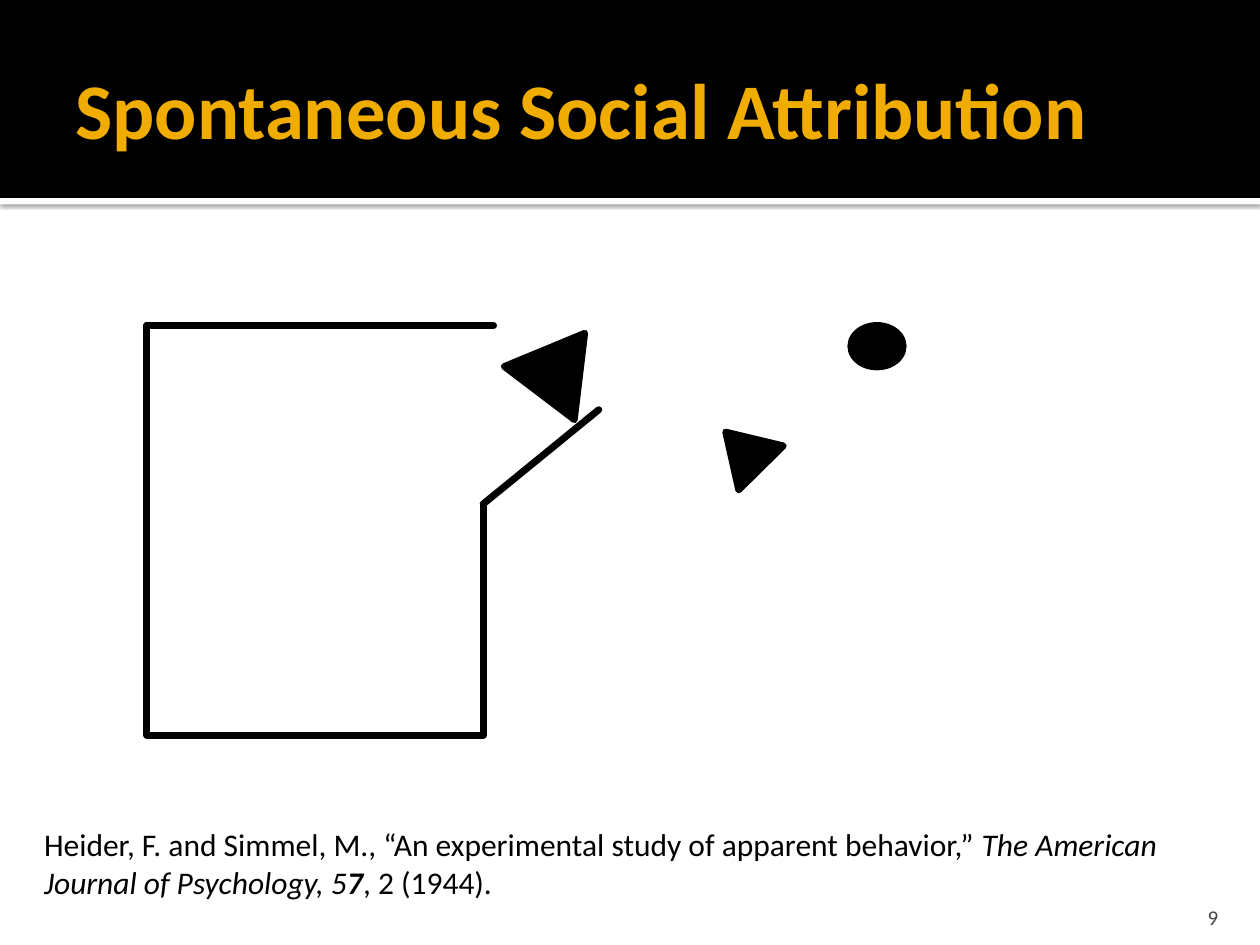
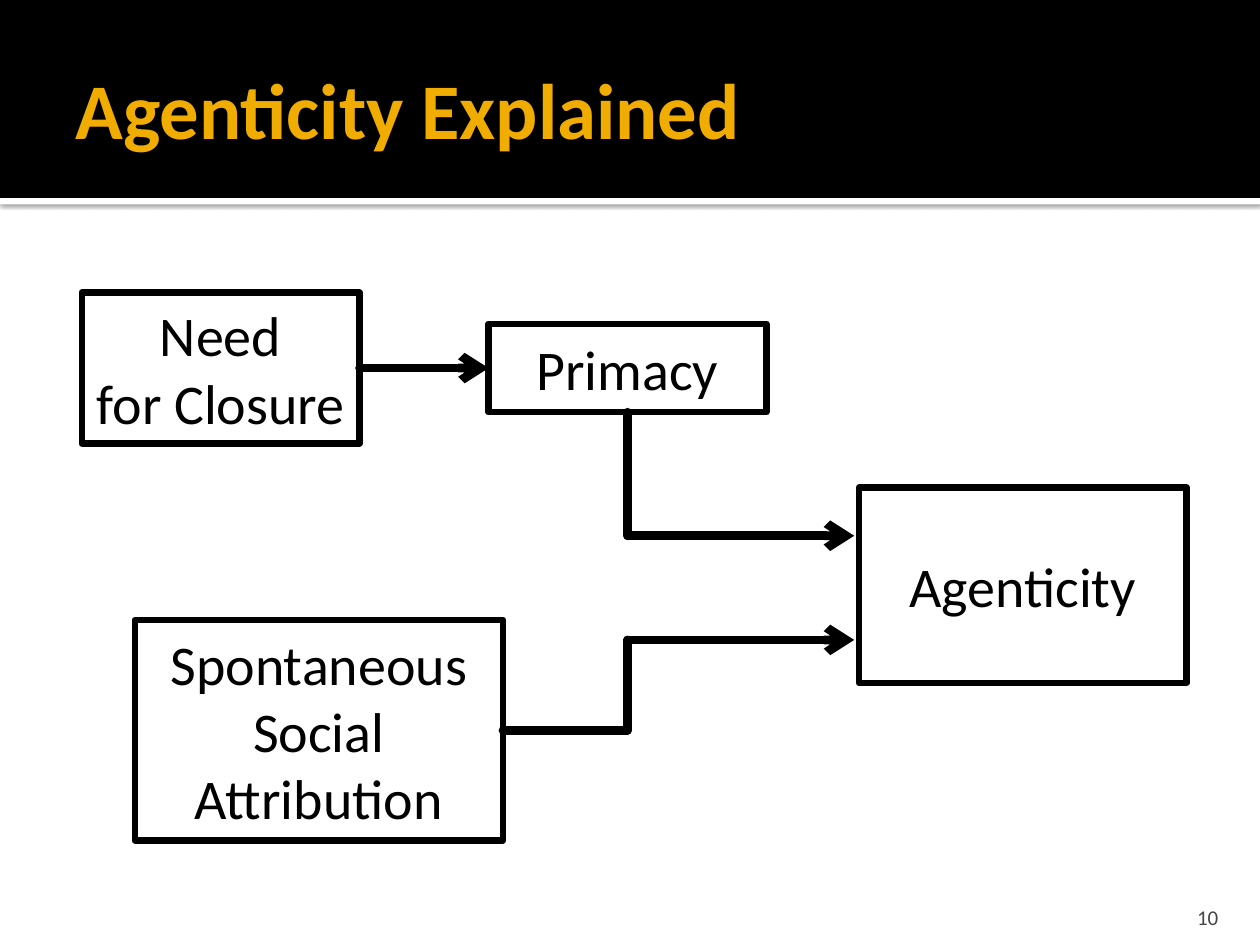
from lxml import etree
from pptx import Presentation
from pptx import util as u
from pptx.dml.color import RGBColor
from pptx.enum import shapes, text
from pptx.oxml import ns

BLACK, WHITE, GOLD, GREY = "000000", "FFFFFF", "F0AD00", "454545"
color = RGBColor.from_string
LEFT, CENTER, RIGHT = text.PP_ALIGN.LEFT, text.PP_ALIGN.CENTER, text.PP_ALIGN.RIGHT
TOP, MIDDLE, BOTTOM = text.MSO_ANCHOR.TOP, text.MSO_ANCHOR.MIDDLE, text.MSO_ANCHOR.BOTTOM


def write(shape, content, size, font_color=BLACK, bold=False, italic=False,
          align=LEFT, anchor=TOP):
    """Append content to the last paragraph; each newline starts another one."""
    frame = shape.text_frame
    frame.word_wrap = True
    frame.vertical_anchor = anchor
    for index, line in enumerate(content.split("\n")):
        paragraph = frame.add_paragraph() if index else frame.paragraphs[-1]
        paragraph.alignment = align
        run = paragraph.add_run()
        run.text = line
        run.font.name = "Calibri"
        run.font.size = u.Pt(size)
        run.font.bold = bold
        run.font.italic = italic
        run.font.color.rgb = color(font_color)


def style(shape, line_width=0, fill=None, arrow=False):
    """Set a round black line and a fill; return the effect list, left empty."""
    if fill:
        shape.fill.solid()
        shape.fill.fore_color.rgb = color(fill)
    if line_width:
        shape.line.width = u.Pt(line_width)
        shape.line.color.rgb = color(BLACK)
        outline = shape.line._get_or_add_ln()
        outline.set("cap", "rnd")
        etree.SubElement(outline, ns.qn("a:round"))
        if arrow:
            etree.SubElement(outline, ns.qn("a:tailEnd"), type="arrow")
    else:
        shape.line.fill.background()
    return etree.SubElement(shape._element.spPr, ns.qn("a:effectLst"))


presentation = Presentation()
presentation.slide_width, presentation.slide_height = u.Cm(25.4), u.Cm(19.05)

# Shared band, title and slide number
slides = []
for title, number in (("Spontaneous Social Attribution", "9"),
                      ("Agenticity Explained", "10")):
    slide = presentation.slides.add_slide(presentation.slide_layouts[6])
    slides.append(slide)

    stripe = slide.shapes.add_shape(
        shapes.MSO_SHAPE.RECTANGLE, 0, u.Cm(3.99), presentation.slide_width, u.Cm(0.13))
    shadow = etree.SubElement(
        style(stripe, fill=WHITE), ns.qn("a:outerShdw"), blurRad=str(u.Pt(2.5)),
        dist=str(u.Pt(0.8)), dir="5400000", algn="t", rotWithShape="0")
    shadow_color = etree.SubElement(shadow, ns.qn("a:srgbClr"), val=BLACK)
    etree.SubElement(shadow_color, ns.qn("a:alpha"), val="60000")

    band = slide.shapes.add_shape(
        shapes.MSO_SHAPE.RECTANGLE, 0, 0, presentation.slide_width, u.Cm(3.99))
    style(band, fill=BLACK)

    title_box = slide.shapes.add_textbox(u.Cm(1.27), u.Cm(0.43), u.Cm(22.86), u.Cm(3.48))
    title_box.text_frame.margin_right = u.Cm(0.13)
    write(title_box, title, 45, GOLD, bold=True, anchor=MIDDLE)

    number_box = slide.shapes.add_textbox(u.Cm(22.78), u.Cm(17.98), u.Cm(2.03), u.Cm(0.76))
    number_box.text_frame.margin_bottom = 0
    write(number_box, number, 12, GREY, align=RIGHT, anchor=BOTTOM)

film_slide, diagram_slide = slides

# Film scene: a house with an open door and three moving figures
citation = film_slide.shapes.add_textbox(u.Cm(0.64), u.Cm(16.51), u.Cm(24.13), u.Cm(1.52))
for content, bold, italic in (
        ("Heider, F. and Simmel, M., “An experimental study of apparent behavior,” ", False, False),
        ("The American Journal of Psychology, 5", False, True),
        ("7", True, True),
        (", 2 (1944).", False, False)):
    write(citation, content, 18, bold=bold, italic=italic)

house_left, house_right, house_top, house_bottom, hinge = 2.96, 9.74, 6.56, 14.82, 10.16
for wall in ((house_left, house_top, house_left, house_bottom),
             (house_right, hinge, house_right, house_bottom),
             (house_left, house_bottom, house_right, house_bottom),
             (house_left, house_top, 9.95, house_top),
             (12.07, 8.26, house_right, hinge)):
    connector = film_slide.shapes.add_connector(
        shapes.MSO_CONNECTOR.STRAIGHT, *map(u.Cm, wall))
    style(connector, 4)

for kind, place, rotation in (
        (shapes.MSO_SHAPE.ISOSCELES_TRIANGLE, (10.44, 6.56, 1.78, 1.52), 37.2),
        (shapes.MSO_SHAPE.ISOSCELES_TRIANGLE, (14.35, 8.56, 1.27, 1.02), 315.4),
        (shapes.MSO_SHAPE.OVAL, (17.15, 6.56, 1.06, 0.84), 0)):
    figure = film_slide.shapes.add_shape(kind, *map(u.Cm, place))
    figure.rotation = rotation
    style(figure, 3.78, BLACK)

# Diagram: two causes lead to agenticity
boxes = {}
for label, place in (("Agenticity", (17.32, 9.83, 6.6, 3.94)),
                     ("Primacy", (9.85, 6.53, 5.6, 1.78)),
                     ("Need\nfor Closure", (1.65, 5.9, 5.6, 3.04)),
                     ("Spontaneous Social Attribution", (2.72, 12.5, 7.42, 4.44))):
    box = diagram_slide.shapes.add_shape(shapes.MSO_SHAPE.RECTANGLE, *map(u.Cm, place))
    style(box, 3.78, WHITE)
    write(box, label, 32, align=CENTER, anchor=MIDDLE)
    boxes[label] = box

need, primacy = boxes["Need\nfor Closure"], boxes["Primacy"]
attribution = boxes["Spontaneous Social Attribution"]
bend, arrow_end, upper, lower, base = 12.65, 17.22, 10.8, 12.9, 14.72
for ends, start, finish, arrow in (
        ((7.25, 7.42, 9.85, 7.42), (need, 3), (primacy, 1), True),
        ((bend, 8.31, bend, upper), (primacy, 2), None, False),
        ((bend, upper, arrow_end, upper), None, None, True),
        ((10.14, base, bend, base), (attribution, 3), None, False),
        ((bend, base, bend, lower), None, None, False),
        ((bend, lower, arrow_end, lower), None, None, True)):
    connector = diagram_slide.shapes.add_connector(
        shapes.MSO_CONNECTOR.STRAIGHT, *map(u.Cm, ends))
    if start:
        connector.begin_connect(*start)
    if finish:
        connector.end_connect(*finish)
    style(connector, 5, arrow=arrow)

presentation.save("out.pptx")
